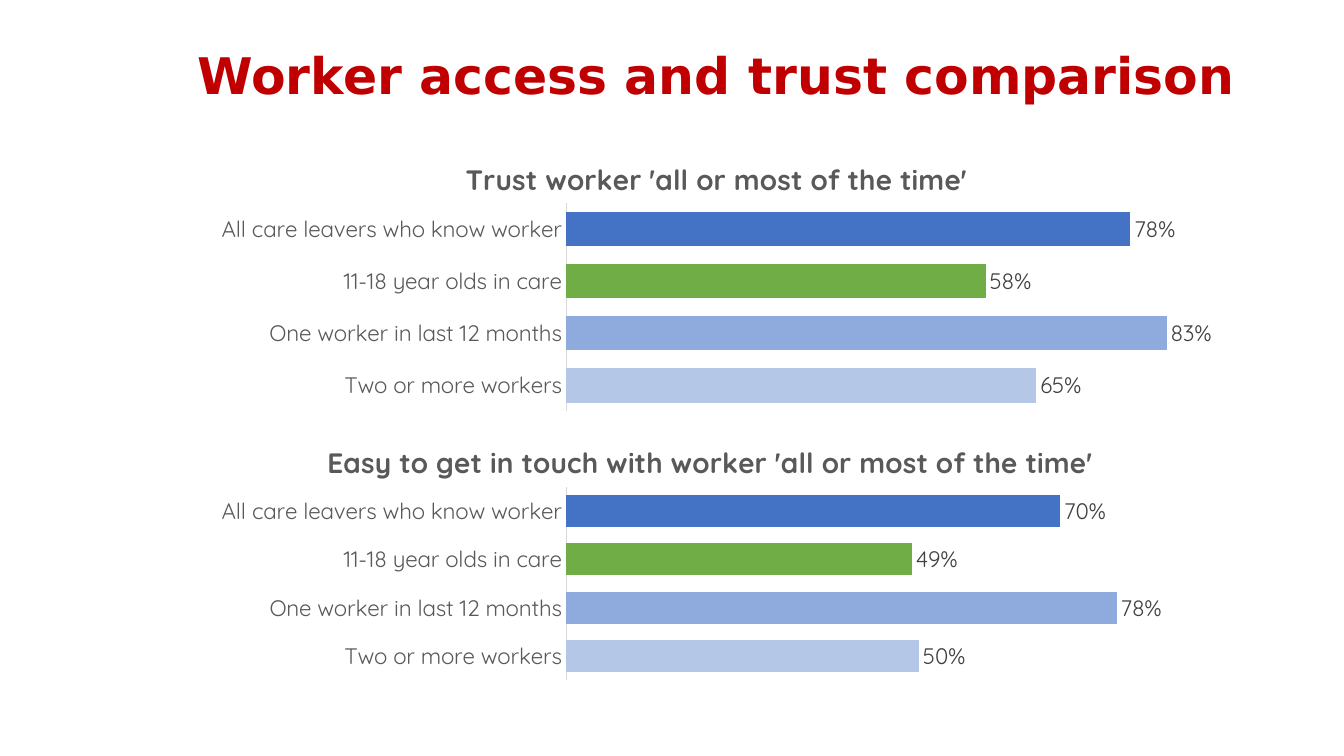
"""Builds the slide that compares trust in and access to workers."""
from dataclasses import dataclass

from lxml import etree
from pptx import Presentation
from pptx import util as u
from pptx.chart.data import CategoryChartData
from pptx.dml.color import RGBColor
from pptx.enum import chart as ch, text
from pptx.oxml.ns import qn

W, H = u.Inches(13.33), u.Inches(7.5)


@dataclass(frozen=True)
class Theme:
    """Colours, fonts and type sizes of the slide."""
    heading: str = "C00000"
    label: str = "595959"
    value: str = "404040"
    axis: str = "D9D9D9"
    bars: tuple = ("4472C4", "70AD47", "8FAADC", "B4C7E7")
    heading_font: str = "DejaVu Sans"
    chart_font: str = "Quicksand"
    heading_size: int = 36
    title_size: int = 20
    label_size: int = 16


T = Theme()
GROUPS = ("All care leavers who know worker", "11-18 year olds in care",
          "One worker in last 12 months", "Two or more workers")


def area(x, y, w, h):
    """Turn percentages of the slide into left, top, width and height."""
    return [int(side * share / 100) for side, share in zip((W, H, W, H), (x, y, w, h))]


def style(font, name, size, color, bold=False):
    """Set the face, size, colour and weight of a font."""
    font.name, font.size, font.bold = name, u.Pt(size), bold
    font.color.rgb = RGBColor.from_string(color)


def place(parent, index, inner=False, **shares):
    """Fix the position of a chart part by percentages of the chart."""
    for old in parent.findall(qn("c:layout")):
        parent.remove(old)
    layout = etree.Element(qn("c:layout"))
    manual = etree.SubElement(layout, qn("c:manualLayout"))
    if inner:
        etree.SubElement(manual, qn("c:layoutTarget"), val="inner")
    for key in ("x", "y"):
        etree.SubElement(manual, qn(f"c:{key}Mode"), val="edge")
    for key, share in shares.items():
        etree.SubElement(manual, qn(f"c:{key}"), val=f"{share / 100:.4f}")
    parent.insert(index, layout)


def add_heading(s, words, box):
    """Fill and format the title placeholder."""
    sp = s.shapes.title
    sp.left, sp.top, sp.width, sp.height = area(*box)
    tf = sp.text_frame
    tf.word_wrap = True
    tf.auto_size = text.MSO_AUTO_SIZE.SHAPE_TO_FIT_TEXT
    tf.vertical_anchor = text.MSO_ANCHOR.TOP
    p = tf.paragraphs[0]
    p.alignment = text.PP_ALIGN.LEFT
    r = p.add_run()
    r.text = words
    style(r.font, T.heading_font, T.heading_size, T.heading, True)


def add_title(chart, words, x, y):
    """Give the chart its bold title."""
    chart.has_title = True
    title = chart.chart_title
    r = title.text_frame.paragraphs[0].add_run()
    r.text = words
    style(r.font, T.chart_font, T.title_size, T.label, True)
    title.include_in_layout = False
    place(title._element, 1, x=x, y=y)


def format_axes(chart):
    """Show the groups from top to bottom and hide the value scale."""
    groups, values = chart.category_axis, chart.value_axis
    groups.reverse_order = True
    groups.major_tick_mark = groups.minor_tick_mark = ch.XL_TICK_MARK.NONE
    groups.format.line.color.rgb = RGBColor.from_string(T.axis)
    groups.format.line.width = u.Pt(0.75)
    style(groups.tick_labels.font, T.chart_font, T.label_size, T.label)
    values.minimum_scale, values.maximum_scale = 0, 0.9
    values.has_major_gridlines = False
    values.visible = False


def format_bars(plot):
    """Colour each bar and label it with its value."""
    plot.gap_width, plot.vary_by_categories = 50, False
    series = plot.series[0]
    series.invert_if_negative = False
    for i, color in enumerate(T.bars):
        fill = series.points[i].format.fill
        fill.solid()
        fill.fore_color.rgb = RGBColor.from_string(color)
    labels = series.data_labels
    labels.show_value = True
    labels.number_format, labels.number_format_is_linked = "0%", False
    labels.position = ch.XL_LABEL_POSITION.OUTSIDE_END
    style(labels.font, T.chart_font, T.label_size, T.value)


def add_bars(s, title, values, box, title_at, plot_at):
    """Add one titled bar chart of the four groups."""
    data = CategoryChartData(number_format="0%")
    data.categories = GROUPS
    data.add_series("Series 1", values)
    chart = s.shapes.add_chart(ch.XL_CHART_TYPE.BAR_CLUSTERED, *area(*box), data).chart
    chart.has_legend = False
    style(chart.font, T.chart_font, T.label_size, "000000")
    add_title(chart, title, *title_at)
    format_axes(chart)
    format_bars(chart.plots[0])
    plot_area = chart._chartSpace.find(".//" + qn("c:plotArea"))
    place(plot_area, 0, True, **dict(zip("xywh", plot_at)))


def main():
    """Build and save the slide."""
    prs = Presentation()
    prs.slide_width, prs.slide_height = W, H
    s = prs.slides.add_slide(prs.slide_layouts[5])
    add_heading(s, "Worker access and trust comparison", (13.95, 5.2, 79.07, 9.47))
    add_bars(s, "Trust worker 'all or most of the time'", (0.78, 0.58, 0.83, 0.65),
             (15, 17.73, 77.04, 37.47), (25, 6.9), (35.2, 24.4, 62.9, 73.5))
    add_bars(s, "Easy to get in touch with worker 'all or most of the time'",
             (0.7, 0.49, 0.78, 0.5),
             (15, 55.2, 76.07, 35.47), (11.8, 7.2), (35.65, 26, 62.15, 72))
    prs.save("out.pptx")


if __name__ == "__main__":
    main()
